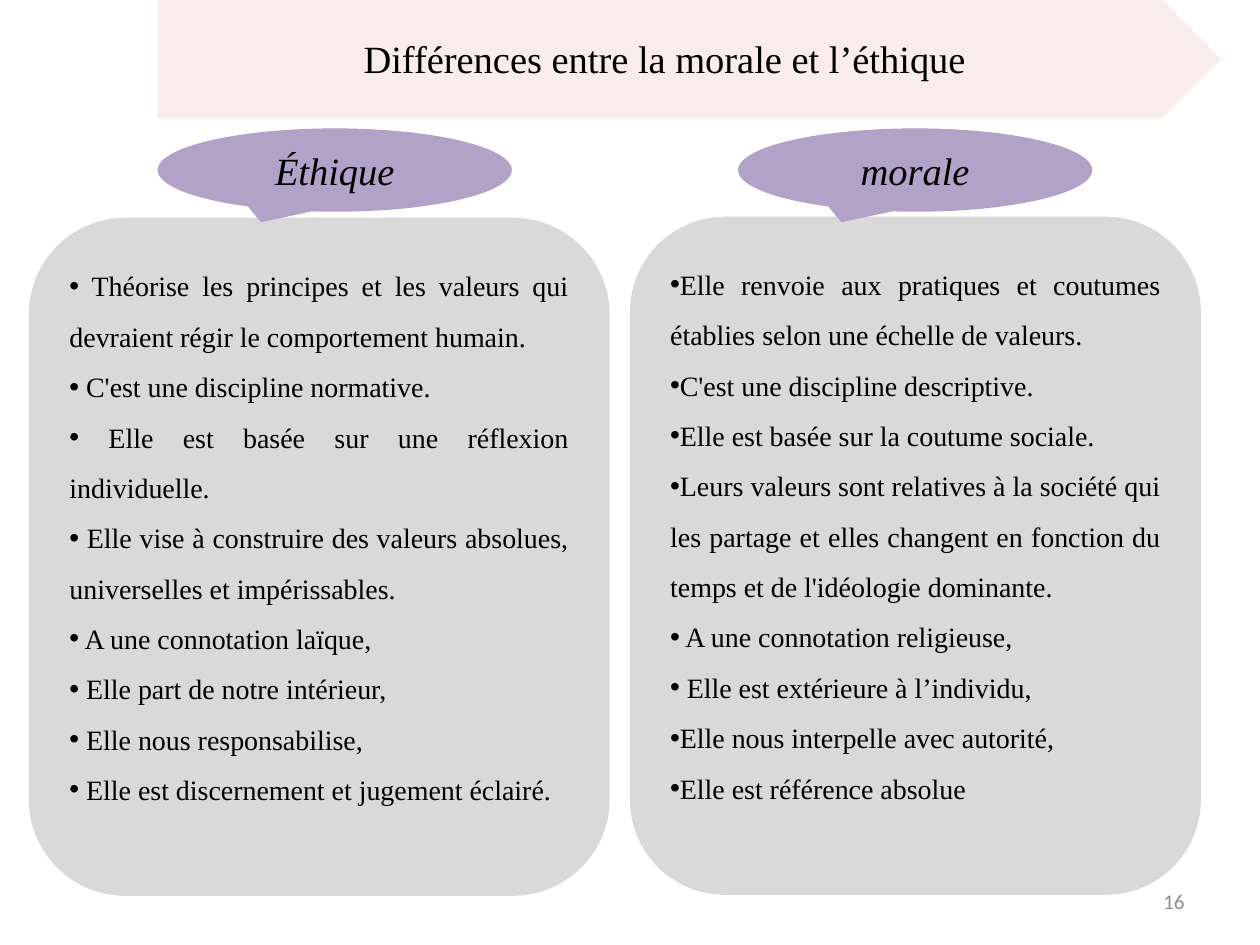
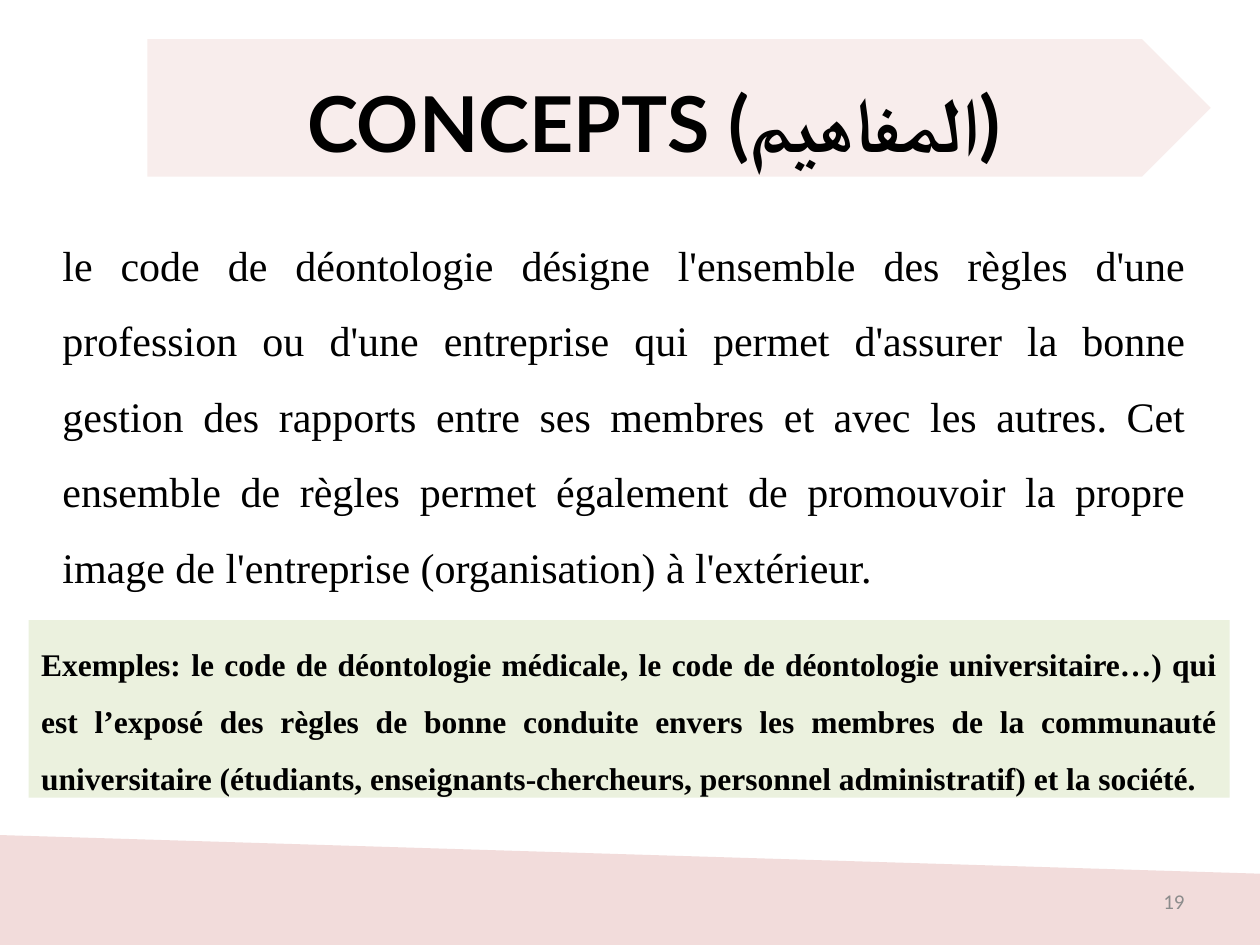
from dataclasses import dataclass

from lxml.etree import SubElement
from pptx import Presentation
from pptx.dml.color import RGBColor
from pptx.enum.shapes import MSO_SHAPE
from pptx.enum.text import MSO_ANCHOR, PP_ALIGN
from pptx.oxml.ns import qn
from pptx.shapes.autoshape import Shape
from pptx.slide import Slide
from pptx.util import Cm, Pt


@dataclass(frozen=True)
class Theme:
    arrow: str = "F8EDEC"
    panel: str = "D9D9D9"
    callout: str = "B3A2C7"
    example: str = "EBF1DE"
    band: str = "F2DCDB"
    ink: str = "000000"
    muted: str = "8C8C8C"
    serif: str = "Times New Roman"
    display: str = "Lato"
    sans: str = "Calibri"
    number_size: int = 12
    list_size: int = 16
    example_size: int = 18
    heading_size: int = 22
    definition_size: int = 24
    concept_size: int = 44


@dataclass(frozen=True)
class Box:
    left: float
    top: float
    width: float
    height: float

    def lengths(self) -> tuple[Cm, Cm, Cm, Cm]:
        return Cm(self.left), Cm(self.top), Cm(self.width), Cm(self.height)


@dataclass(frozen=True)
class Column:
    heading: str
    callout: Box
    panel: Box
    points: tuple[str, ...]


THEME = Theme()
SLIDE_WIDTH, SLIDE_HEIGHT = 25.4, 19.05
NUMBER_BOX = Box(18.21, 17.65, 5.92, 1.02)

COLUMNS = (
    Column(
        "Éthique",
        Box(3.18, 2.59, 7.14, 1.68),
        Box(0.58, 4.39, 11.71, 13.67),
        (
            " Théorise les principes et les valeurs qui devraient régir le comportement humain.",
            " C'est une discipline normative.",
            " Elle est basée sur une réflexion individuelle.",
            " Elle vise à construire des valeurs absolues, universelles et impérissables.",
            " A une connotation laïque,",
            " Elle part de notre intérieur,",
            " Elle nous responsabilise,",
            " Elle est discernement et jugement éclairé.",
        ),
    ),
    Column(
        "morale",
        Box(14.88, 2.59, 7.14, 1.68),
        Box(12.7, 4.37, 11.51, 13.67),
        (
            "Elle renvoie aux pratiques et coutumes établies selon une échelle de valeurs.",
            "C'est une discipline descriptive.",
            "Elle est basée sur la coutume sociale.",
            "Leurs valeurs sont relatives à la société qui les partage et elles changent "
            "en fonction du temps et de l'idéologie dominante.",
            " A une connotation religieuse,",
            " Elle est extérieure à l’individu,",
            "Elle nous interpelle avec autorité,",
            "Elle est référence absolue",
        ),
    ),
)

DEFINITION = (
    "le code de déontologie désigne l'ensemble des règles d'une profession ou d'une "
    "entreprise qui permet d'assurer la bonne gestion des rapports entre ses membres et "
    "avec les autres. Cet ensemble de règles permet également de promouvoir la propre "
    "image de l'entreprise (organisation) à l'extérieur."
)
EXAMPLES = (
    "Exemples: le code de déontologie médicale, le code de déontologie universitaire…) "
    "qui est l’exposé des règles de bonne conduite envers les membres de la communauté "
    "universitaire (étudiants, enseignants-chercheurs, personnel administratif) et la société."
)


def write_text(
    shape: Shape,
    *texts: str,
    size: int,
    font: str = THEME.serif,
    color: str = THEME.ink,
    align: PP_ALIGN = PP_ALIGN.CENTER,
    anchor: MSO_ANCHOR = MSO_ANCHOR.TOP,
    spacing: float = 1.0,
    bold: bool = False,
    italic: bool = False,
    bullet: str = "",
) -> None:
    frame = shape.text_frame
    frame.word_wrap = True
    frame.vertical_anchor = anchor
    for index, text in enumerate(texts):
        paragraph = frame.add_paragraph() if index else frame.paragraphs[0]
        paragraph.alignment = align
        paragraph.line_spacing = spacing
        if bullet:
            properties = paragraph._p.get_or_add_pPr()
            SubElement(properties, qn("a:buFont"), typeface="Arial")
            SubElement(properties, qn("a:buChar"), char=bullet)
        run = paragraph.add_run()
        run.text = text
        run.font.name = font
        run.font.size = Pt(size)
        run.font.bold = bold
        run.font.italic = italic
        run.font.color.rgb = RGBColor.from_string(color)


def add_filled_shape(slide: Slide, kind: MSO_SHAPE, box: Box, fill: str = "") -> Shape:
    shape = slide.shapes.add_shape(kind, *box.lengths())
    shape.shadow.inherit = False
    shape.line.fill.background()
    if fill:
        shape.fill.solid()
        shape.fill.fore_color.rgb = RGBColor.from_string(fill)
    else:
        shape.fill.background()
    return shape


def add_title(slide: Slide, text: str, arrow: Box, box: Box, **text_format) -> None:
    add_filled_shape(slide, MSO_SHAPE.PENTAGON, arrow, THEME.arrow)
    write_text(slide.shapes.add_textbox(*box.lengths()), text, **text_format)


def add_slide_number(slide: Slide, number: int) -> None:
    write_text(
        slide.shapes.add_textbox(*NUMBER_BOX.lengths()),
        str(number),
        size=THEME.number_size,
        font=THEME.sans,
        color=THEME.muted,
        align=PP_ALIGN.RIGHT,
        anchor=MSO_ANCHOR.MIDDLE,
    )


def add_bottom_band(slide: Slide) -> None:
    builder = slide.shapes.build_freeform(Cm(0), Cm(16.87))
    corners = ((SLIDE_WIDTH, 17.65), (SLIDE_WIDTH, SLIDE_HEIGHT), (0, SLIDE_HEIGHT))
    builder.add_line_segments([(Cm(x), Cm(y)) for x, y in corners], close=True)
    band = builder.convert_to_shape()
    band.shadow.inherit = False
    band.fill.solid()
    band.fill.fore_color.rgb = RGBColor.from_string(THEME.band)
    band.line.color.rgb = RGBColor.from_string(THEME.band)
    band.line.width = Pt(2)


def build_comparison(slide: Slide) -> None:
    add_title(
        slide,
        "Différences entre la morale et l’éthique",
        Box(3.18, 0, 21.44, 2.39),
        Box(1.4, 0.58, 24, 1.19),
        size=THEME.heading_size,
    )
    for column in COLUMNS:
        panel = add_filled_shape(slide, MSO_SHAPE.ROUNDED_RECTANGLE, column.panel, THEME.panel)
        write_text(
            panel,
            *column.points,
            size=THEME.list_size,
            align=PP_ALIGN.JUSTIFY,
            spacing=1.5,
            bullet="•",
        )
        callout = add_filled_shape(slide, MSO_SHAPE.OVAL_CALLOUT, column.callout, THEME.callout)
        write_text(
            callout,
            column.heading,
            size=THEME.heading_size,
            anchor=MSO_ANCHOR.MIDDLE,
            italic=True,
        )
    add_slide_number(slide, 16)


def build_concepts(slide: Slide) -> None:
    add_bottom_band(slide)
    add_title(
        slide,
        "CONCEPTS (المفاهيم)",
        Box(2.97, 0.79, 21.44, 2.77),
        Box(1.78, 1.4, 22.81, 2.13),
        size=THEME.concept_size,
        font=THEME.display,
        bold=True,
    )
    definition = add_filled_shape(
        slide, MSO_SHAPE.ROUNDED_RECTANGLE, Box(0.58, 3.76, 24, 8.79)
    )
    write_text(
        definition,
        DEFINITION,
        size=THEME.definition_size,
        align=PP_ALIGN.JUSTIFY,
        spacing=1.5,
    )
    examples = add_filled_shape(
        slide, MSO_SHAPE.RECTANGLE, Box(0.58, 12.5, 24.21, 3.58), THEME.example
    )
    write_text(
        examples,
        EXAMPLES,
        size=THEME.example_size,
        align=PP_ALIGN.JUSTIFY,
        spacing=1.5,
        bold=True,
    )
    add_slide_number(slide, 19)


def main() -> None:
    presentation = Presentation()
    presentation.slide_width = Cm(SLIDE_WIDTH)
    presentation.slide_height = Cm(SLIDE_HEIGHT)
    blank_layout = presentation.slide_layouts[6]
    for build in (build_comparison, build_concepts):
        build(presentation.slides.add_slide(blank_layout))
    presentation.save("out.pptx")


if __name__ == "__main__":
    main()
